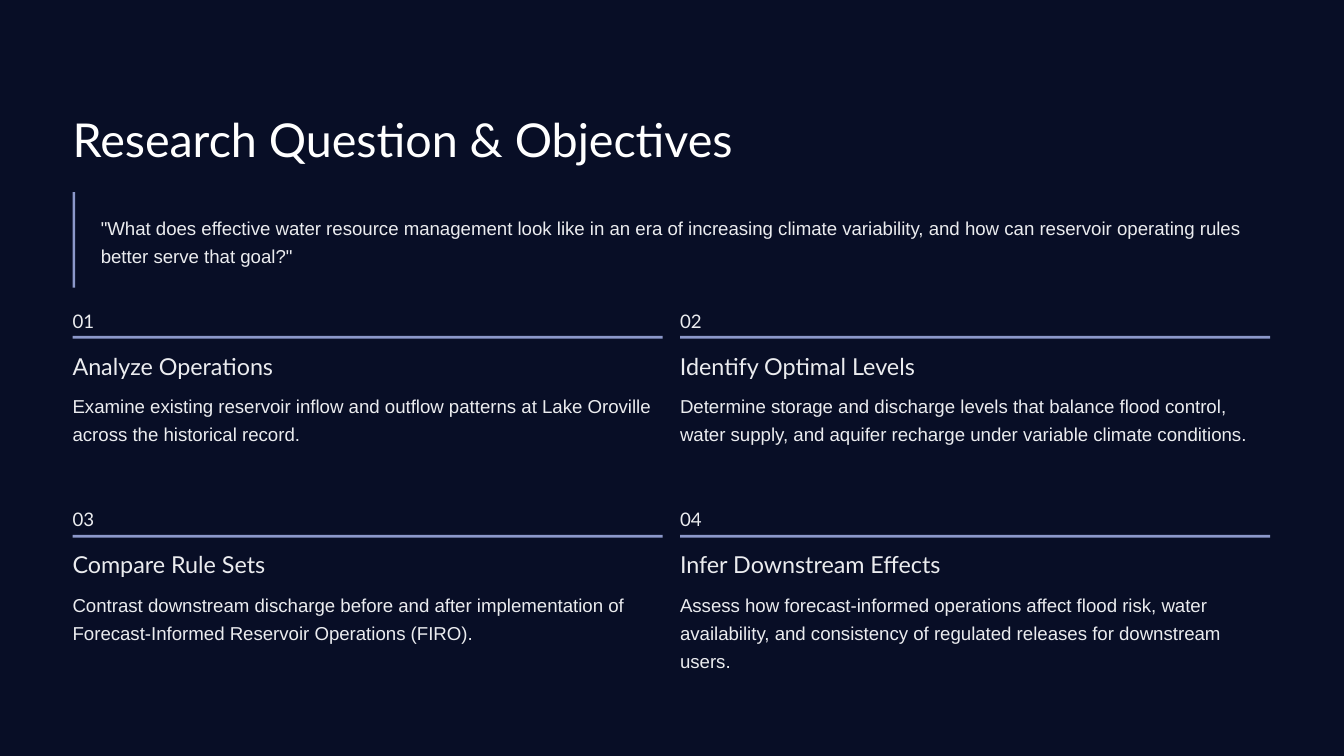
from dataclasses import dataclass

from pptx import Presentation
from pptx.dml.color import RGBColor
from pptx.enum.shapes import MSO_SHAPE
from pptx.enum.text import MSO_ANCHOR, MSO_AUTO_SIZE, PP_ALIGN
from pptx.slide import Slide
from pptx.text.text import TextFrame
from pptx.util import Inches, Pt

NAVY = RGBColor(0x08, 0x0E, 0x26)
WHITE = RGBColor(0xFF, 0xFF, 0xFF)
PALE = RGBColor(0xEB, 0xEC, 0xEF)
PERIWINKLE = RGBColor(0x8C, 0x98, 0xCA)

RECTANGLE = MSO_SHAPE.RECTANGLE
TOP, MIDDLE = MSO_ANCHOR.TOP, MSO_ANCHOR.MIDDLE
LEFT = PP_ALIGN.LEFT
FIXED_SIZE = MSO_AUTO_SIZE.NONE

SLIDE_WIDTH = 10
SLIDE_HEIGHT = SLIDE_WIDTH * 9 / 16
MARGIN = 0.54
GRID_TOP = 2.28
COLUMN_STEP, ROW_STEP = 4.52, 1.48
COLUMN_WIDTH = 4.39
RULE_THICKNESS = 0.02


@dataclass(frozen=True)
class TextStyle:
    font: str
    size: float
    line_spacing: float
    color: RGBColor = PALE
    anchor: MSO_ANCHOR = TOP
    wrap: bool = False


@dataclass(frozen=True)
class Objective:
    heading: str
    heading_width: float
    description: str


TITLE = TextStyle("Lato", 25, 31, color=WHITE)
NUMBER = TextStyle("Lato", 10, 15, anchor=MIDDLE)
HEADING = TextStyle("Lato", 12.5, 15.5)
BODY = TextStyle("Arial", 10, 15, wrap=True)

QUESTION = (
    '"What does effective water resource management look like in an era of '
    "increasing climate variability, and how can reservoir operating rules "
    'better serve that goal?"'
)
OBJECTIVES = [
    Objective(
        "Analyze Operations", 1.74,
        "Examine existing reservoir inflow and outflow patterns at Lake Oroville "
        "across the historical record.",
    ),
    Objective(
        "Identify Optimal Levels", 1.94,
        "Determine storage and discharge levels that balance flood control, water "
        "supply, and aquifer recharge under variable climate conditions.",
    ),
    Objective(
        "Compare Rule Sets", 1.74,
        "Contrast downstream discharge before and after implementation of "
        "Forecast-Informed Reservoir Operations (FIRO).",
    ),
    Objective(
        "Infer Downstream Effects", 2.15,
        "Assess how forecast-informed operations affect flood risk, water "
        "availability, and consistency of regulated releases for downstream users.",
    ),
]


def write(frame: TextFrame, text: str, style: TextStyle) -> None:
    frame.margin_left = frame.margin_top = frame.margin_right = frame.margin_bottom = 0
    frame.auto_size = FIXED_SIZE
    frame.word_wrap = style.wrap
    frame.vertical_anchor = style.anchor
    paragraph = frame.paragraphs[0]
    paragraph.alignment = LEFT
    paragraph.line_spacing = Pt(style.line_spacing)
    paragraph.space_before = Pt(0)
    run = paragraph.add_run()
    run.text = text
    run.font.name = style.font
    run.font.size = Pt(style.size)
    run.font.color.rgb = style.color


def add_text(slide: Slide, left: float, top: float, width: float, height: float,
             text: str, style: TextStyle) -> None:
    box = slide.shapes.add_textbox(Inches(left), Inches(top), Inches(width), Inches(height))
    write(box.text_frame, text, style)


def add_bar(slide: Slide, left: float, top: float, width: float, height: float) -> None:
    bar = slide.shapes.add_shape(
        RECTANGLE, Inches(left), Inches(top), Inches(width), Inches(height))
    bar.shadow.inherit = False
    bar.fill.solid()
    bar.fill.fore_color.rgb = PERIWINKLE
    bar.line.fill.background()


def add_title(slide: Slide, text: str) -> None:
    title = slide.shapes.title
    title.left, title.top = Inches(MARGIN), Inches(0.81)
    title.width, title.height = Inches(5.28), Inches(0.44)
    write(title.text_frame, text, TITLE)


def add_objective(slide: Slide, index: int, objective: Objective) -> None:
    row, column = divmod(index, 2)
    left = MARGIN + column * COLUMN_STEP
    top = GRID_TOP + row * ROW_STEP
    add_text(slide, left, top, 0.28, 0.17, f"{index + 1:02}", NUMBER)
    add_bar(slide, left, top + 0.22, COLUMN_WIDTH, RULE_THICKNESS)
    add_text(slide, left, top + 0.33, objective.heading_width, 0.22,
             objective.heading, HEADING)
    add_text(slide, left, top + 0.62, COLUMN_WIDTH, 0.64, objective.description, BODY)


def main() -> None:
    presentation = Presentation()
    presentation.slide_width = Inches(SLIDE_WIDTH)
    presentation.slide_height = Inches(SLIDE_HEIGHT)
    title_only = presentation.slide_layouts[5]
    slide = presentation.slides.add_slide(title_only)
    slide.background.fill.solid()
    slide.background.fill.fore_color.rgb = NAVY

    add_title(slide, "Research Question & Objectives")
    add_text(slide, 0.75, 1.57, 8.71, 0.42, QUESTION, BODY)
    add_bar(slide, MARGIN, 1.43, RULE_THICKNESS, 0.71)
    for index, objective in enumerate(OBJECTIVES):
        add_objective(slide, index, objective)

    presentation.save("out.pptx")


if __name__ == "__main__":
    main()
